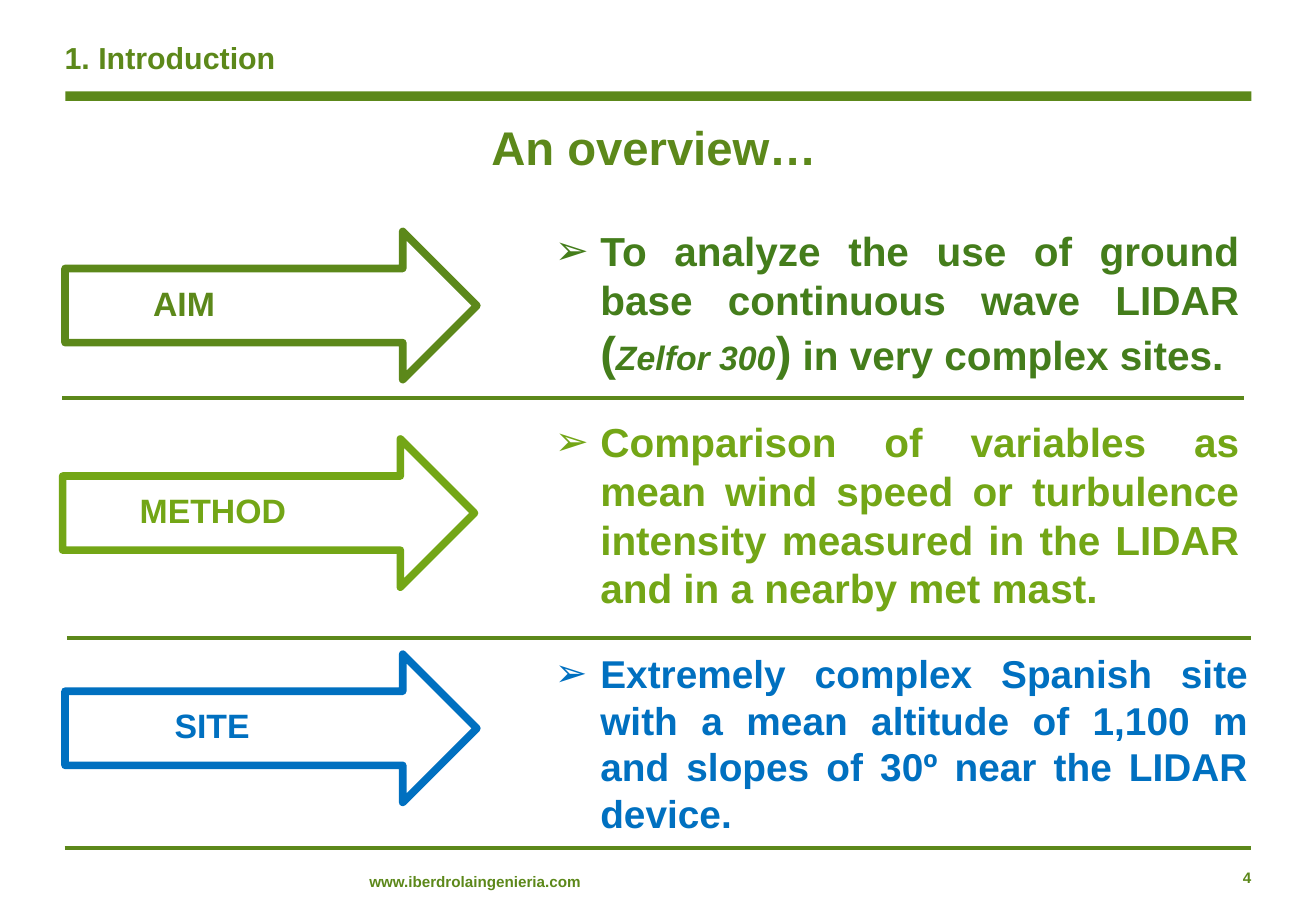
from lxml import etree
from pptx import Presentation
from pptx import util as u
from pptx.dml.color import RGBColor
from pptx.enum import shapes, text
from pptx.oxml.ns import qn

Cm, Pt = u.Cm, u.Pt
OLIVE = RGBColor(0x5C, 0x88, 0x1A)
FOREST = RGBColor(0x44, 0x7D, 0x1B)
LIME = RGBColor(0x73, 0xA6, 0x16)
BLUE = RGBColor(0x00, 0x70, 0xC0)
LEFT, CENTER, RIGHT, JUSTIFY = (text.PP_ALIGN.LEFT, text.PP_ALIGN.CENTER,
                                text.PP_ALIGN.RIGHT, text.PP_ALIGN.JUSTIFY)

# All places are left, top, width, height in centimetres.
TITLE = ("1. Introduction", (1.35, 0.53, 24.79, 1.4))
SUBTITLE = ("An overview…", (1.4, 2.34, 24.79, 1.8))
WEBSITE = ("www.iberdrolaingenieria.com", (7.72, 18.24, 4.93, 0.38))
PAGE_NUMBER = ("4", (23.16, 18.16, 3, 0.56))
HEADER_BAR = (1.37, 1.91, 24.79, 0.2)
ARROW_SIZE = (8.61, 3.1)
LABEL_DROP, LABEL_HEIGHT = 1.03, 1.02
STATEMENT_LEFT, BULLET_INDENT = 11.35, 0.95

# A run is (words, changes to the format of its box).
ROWS = [
    dict(label="AIM", label_color=OLIVE, label_left=2.95, label_width=4.5,
         arrow=(1.36, 4.84), place=(4.11, 14.81, 4.47), color=FOREST, size=24,
         runs=[("To analyze the use of ground base continuous wave LIDAR ", {}),
               ("(", dict(size=28)),
               ("Zelfor 300", dict(size=20, italic=True)),
               (")", dict(size=28)),
               (" in very complex sites.", {})]),
    dict(label="METHOD", label_color=LIME, label_left=2.67, label_width=3.61,
         arrow=(1.31, 9.18), place=(8.59, 14.81, 4.34), color=LIME, size=24,
         runs=[("Comparison of variables as mean wind speed or turbulence "
                "intensity measured in the LIDAR and in a nearby met mast.", {})]),
    dict(label="SITE", label_color=BLUE, label_left=3.4, label_width=2.11,
         arrow=(1.36, 13.68), place=(13.34, 15.01, 4.39), color=BLUE, size=23,
         runs=[("Extremely complex Spanish site with a mean altitude of 1,100 m "
                "and slopes of 30º near the LIDAR device.", {})]),
]
# Left, right, height on the page, line width in points.
RULES = [(1.3, 26.01, 8.33, 2.25), (1.4, 26.16, 13.34, 2.25),
         (1.35, 26.16, 17.73, 2)]


def add_bullet(para):
    properties = para._p.get_or_add_pPr()
    properties.set("marL", str(Cm(BULLET_INDENT)))
    properties.set("indent", str(-Cm(BULLET_INDENT)))
    etree.SubElement(properties, qn("a:buFont")).set("typeface", "Arial")
    etree.SubElement(properties, qn("a:buChar")).set("char", "➢")


def write(box, runs, size, color=OLIVE, align=LEFT, anchor=text.MSO_ANCHOR.TOP,
          margins=(0.25, 0.13, 0.25, 0.13), spacing=None, bullet=False, wrap=True):
    """Fill a box with one bold paragraph of text or of (words, changes) runs."""
    frame = box.text_frame
    frame.word_wrap = wrap
    frame.auto_size = text.MSO_AUTO_SIZE.NONE
    frame.vertical_anchor = anchor
    (frame.margin_left, frame.margin_top,
     frame.margin_right, frame.margin_bottom) = [Cm(m) for m in margins]
    para = frame.paragraphs[0]
    if bullet:
        add_bullet(para)
    para.alignment = align
    if spacing:
        para.line_spacing = spacing
    for words, changes in [(runs, {})] if isinstance(runs, str) else runs:
        span = para.add_run()
        span.text = words
        font = span.font
        font.name, font.bold = "Arial", True
        font.italic = changes.get("italic", False)
        font.size = Pt(changes.get("size", size))
        font.color.rgb = color


def add_text(page, place, runs, **style):
    write(page.shapes.add_textbox(*[Cm(v) for v in place]), runs, **style)


def add_rule(page, left, right, height, weight):
    rule = page.shapes.add_connector(shapes.MSO_CONNECTOR.STRAIGHT, Cm(left),
                                     Cm(height), Cm(right), Cm(height))
    rule.line.color.rgb = OLIVE
    rule.line.width = Pt(weight)
    etree.SubElement(rule._element.spPr, qn("a:effectLst"))


def add_arrow(page, left, top, color):
    arrow = page.shapes.add_shape(shapes.MSO_SHAPE.RIGHT_ARROW, Cm(left), Cm(top),
                                  *[Cm(v) for v in ARROW_SIZE])
    arrow.shadow.inherit = False
    arrow.fill.background()
    arrow.line.color.rgb = color
    arrow.line.width = Pt(4.5)
    etree.SubElement(arrow.line._get_or_add_ln(), qn("a:round"))


def add_row(page, row):
    left, top = row["arrow"]
    add_arrow(page, left, top, row["label_color"])
    label_place = (row["label_left"], top + LABEL_DROP, row["label_width"], LABEL_HEIGHT)
    add_text(page, label_place, row["label"], size=20, color=row["label_color"],
             spacing=0.9, wrap=False)
    add_text(page, (STATEMENT_LEFT, *row["place"]), row["runs"], size=row["size"],
             color=row["color"], align=JUSTIFY, anchor=text.MSO_ANCHOR.MIDDLE,
             bullet=True)


def main():
    deck = Presentation()
    deck.slide_width, deck.slide_height = Cm(27.51), Cm(19.05)
    page = deck.slides.add_slide(deck.slide_layouts[5])

    words, place = TITLE
    title = page.shapes.title
    title.left, title.top, title.width, title.height = [Cm(v) for v in place]
    write(title, words, size=18, anchor=text.MSO_ANCHOR.MIDDLE,
          margins=(0, 0.13, 0.25, 0.13), spacing=Pt(20))

    bar = page.shapes.add_shape(shapes.MSO_SHAPE.RECTANGLE,
                                *[Cm(v) for v in HEADER_BAR])
    bar.shadow.inherit = False
    bar.fill.solid()
    bar.fill.fore_color.rgb = OLIVE
    bar.line.fill.background()

    words, place = SUBTITLE
    add_text(page, place, words, size=28, align=CENTER,
             margins=(0, 0.13, 0.25, 0.13))
    for row in ROWS:
        add_row(page, row)
    for rule in RULES:
        add_rule(page, *rule)
    for (words, place), align in ((WEBSITE, LEFT), (PAGE_NUMBER, RIGHT)):
        add_text(page, place, words, size=9, align=align, margins=(0, 0, 0, 0))
    deck.save("out.pptx")


if __name__ == "__main__":
    main()
